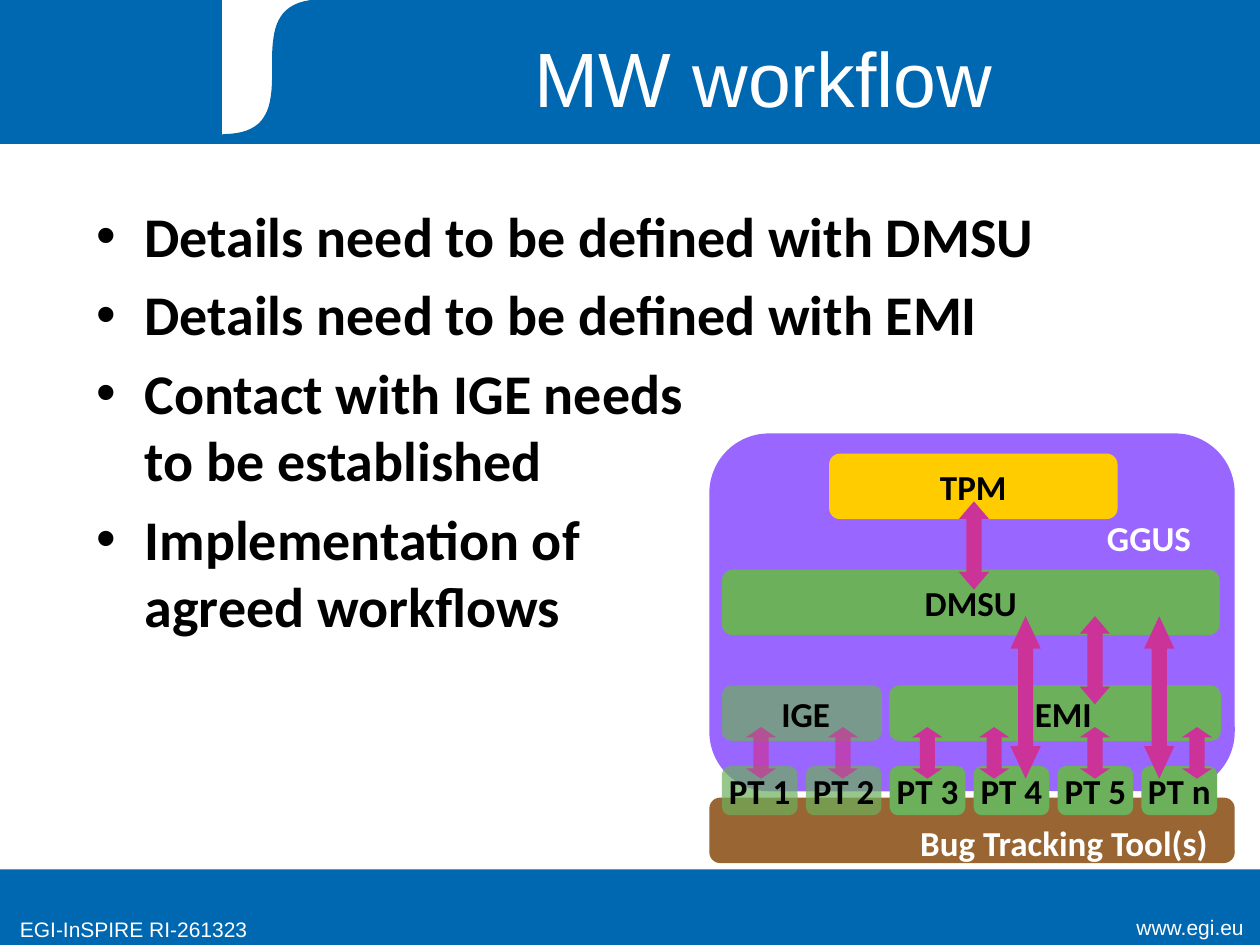
from dataclasses import dataclass
from typing import Optional

from lxml import etree
from pptx import Presentation
from pptx import util as u
from pptx.dml.color import RGBColor
from pptx.enum import shapes, text
from pptx.oxml import ns

BLUE, WHITE, BLACK = "0067B1", "FFFFFF", "000000"
PURPLE, BROWN, GREEN = "9966FF", "996633", "6CB05C"
YELLOW, PINK = "FFCC00", "CC3399"
SOLID, FADED = 100, 70

PAGE_WIDTH, PAGE_HEIGHT = 10, 7.5
FOOTER_TOP, HEADER_HEIGHT = 6.9, 1.14
BULLET_INDENT = 0.38

ARROW_WIDTH = 0.24
HEAD_SHARE = 0.2  # arrowhead length as a share of the arrow length

# Diagram rows and columns
PANEL_LEFT, PANEL_WIDTH = 5.63, 4.17
FIRST_LEFT, LAST_LEFT = 5.73, 9.06
TEAM_TOP, TEAM_HEIGHT = 5.44, 0.44
TRACKER_TOP, TRACKER_WIDTH, TRACKER_HEIGHT = 6.08, 0.6, 0.39
TRACKERS = ["PT 1", "PT 2", "PT 3", "PT 4", "PT 5", "PT n"]
TRACKER_PITCH = (LAST_LEFT - FIRST_LEFT) / (len(TRACKERS) - 1)
IGE_TRACKERS = 2  # the first trackers belong to IGE and are faded
TRACKER_ARROW_XS = [6.04, 6.69, 7.36, 7.89, 8.69, 9.5]

# Heights at which the arrows end
TPM_END, DMSU_UPPER_END, DMSU_LOWER_END = 3.98, 4.68, 4.89
TEAM_UPPER_END, TEAM_LOWER_END, TRACKER_END = 5.59, 5.77, 6.18


@dataclass
class Block:
    left: float
    top: float
    width: float
    height: float
    fill: Optional[str] = None
    label: str = ""
    color: str = BLACK
    opacity: int = SOLID
    pad_left: float = 0
    pad_right: float = 0


@dataclass
class Arrow:
    x: float
    top: float
    bottom: float
    opacity: int = SOLID


@dataclass
class Caption:
    left: float
    top: float
    width: float
    height: float
    words: str
    size: float
    align: text.PP_ALIGN


def rgb(color: str) -> RGBColor:
    return RGBColor.from_string(color)


def paint(shape, fill: Optional[str], line: Optional[str] = None, opacity: int = SOLID) -> None:
    shape.shadow.inherit = False
    if fill:
        shape.fill.solid()
        shape.fill.fore_color.rgb = rgb(fill)
        if opacity < SOLID:
            color = shape._element.spPr.find(f"{ns.qn('a:solidFill')}/{ns.qn('a:srgbClr')}")
            etree.SubElement(color, ns.qn("a:alpha"), val=str(opacity * 1000))
    else:
        shape.fill.background()
    if line:
        shape.line.color.rgb = rgb(line)
        shape.line.width = u.Pt(0.75)
    else:
        shape.line.fill.background()


def style(para, name: str, size: float, color: str, bold: bool = False) -> None:
    para.font.name = name
    para.font.size = u.Pt(size)
    para.font.bold = bold
    para.font.color.rgb = rgb(color)


def add_preset(page, kind, left: float, top: float, width: float, height: float):
    return page.shapes.add_shape(kind, *map(u.Inches, (left, top, width, height)))


def add_text_frame(page, left: float, top: float, width: float, height: float):
    box = page.shapes.add_textbox(*map(u.Inches, (left, top, width, height)))
    box.text_frame.word_wrap = True
    return box.text_frame


def add_block(page, block: Block) -> None:
    shape = add_preset(page, shapes.MSO_SHAPE.ROUNDED_RECTANGLE,
                       block.left, block.top, block.width, block.height)
    paint(shape, block.fill, opacity=block.opacity)
    if not block.label:
        return
    frame = shape.text_frame
    frame.word_wrap = False
    frame.vertical_anchor = text.MSO_ANCHOR.MIDDLE
    frame.margin_left = u.Inches(block.pad_left)
    frame.margin_right = u.Inches(block.pad_right)
    para = frame.paragraphs[0]
    para.text = block.label
    para.alignment = text.PP_ALIGN.CENTER
    style(para, "Calibri", 20, block.color, bold=True)


def add_arrow(page, arrow: Arrow) -> None:
    """Draw a level double arrow around its centre, then turn it upright."""
    length = arrow.bottom - arrow.top
    middle = (arrow.top + arrow.bottom) / 2
    shape = add_preset(page, shapes.MSO_SHAPE.LEFT_RIGHT_ARROW, arrow.x - length / 2,
                       middle - ARROW_WIDTH / 2, length, ARROW_WIDTH)
    shape.rotation = 90
    shape.adjustments[0] = 0.5
    shape.adjustments[1] = HEAD_SHARE * length / ARROW_WIDTH
    paint(shape, PINK, opacity=arrow.opacity)


def add_caption(page, caption: Caption) -> None:
    frame = add_text_frame(page, caption.left, caption.top, caption.width, caption.height)
    frame.vertical_anchor = text.MSO_ANCHOR.MIDDLE
    para = frame.paragraphs[0]
    para.text = caption.words
    para.alignment = caption.align
    style(para, "Arial", caption.size, WHITE)


def add_swoosh(page) -> None:
    """White patch partly covered by a blue outline whose left edge is an S-curve."""
    left, curve_end, right, bottom = 1.77, 2.56, 3.74, 1.07
    patch = add_preset(page, shapes.MSO_SHAPE.RECTANGLE, left, 0, right - left, bottom)
    paint(patch, WHITE, WHITE)

    # Cubic Bezier from bottom left to the top; units are thousandths of an inch
    units, steps = 1000, 40
    controls = [(left, bottom), (curve_end, bottom), (left, 0), (curve_end, 0)]
    curve = []
    for step in range(steps + 1):
        t = step / steps
        weights = [(1 - t) ** 3, 3 * t * (1 - t) ** 2, 3 * t ** 2 * (1 - t), t ** 3]
        curve.append(tuple(units * sum(weight * point[axis]
                                       for weight, point in zip(weights, controls))
                           for axis in (0, 1)))
    builder = page.shapes.build_freeform(right * units, 0, scale=u.Inches(1) / units)
    builder.add_line_segments([(right * units, bottom * units), *curve], close=True)
    paint(builder.convert_to_shape(), BLUE, BLUE)


def add_bullets(page, items: list[str]) -> None:
    frame = add_text_frame(page, 0.67, 1.55, 8.83, 4.95)
    for index, item in enumerate(items):
        para = frame.add_paragraph() if index else frame.paragraphs[0]
        para.text = item
        properties = para._p.get_or_add_pPr()
        properties.set("marL", str(u.Inches(BULLET_INDENT)))
        properties.set("indent", str(-u.Inches(BULLET_INDENT)))
        etree.SubElement(properties, ns.qn("a:buFont"), typeface="Arial")
        etree.SubElement(properties, ns.qn("a:buChar"), char="•")
        para.space_before = u.Pt(6.4 if index else 0)
        style(para, "Calibri", 32, BLACK, bold=True)


def add_diagram(page) -> None:
    blocks = [
        Block(PANEL_LEFT, 3.44, PANEL_WIDTH, 2.84, PURPLE),
        Block(8.77, 4.05, 0.7, 0.43, label="GGUS", color=WHITE),
        Block(PANEL_LEFT, 6.33, PANEL_WIDTH, 0.52, BROWN),
        Block(7.37, 6.47, 2.4, 0.43, label="Bug Tracking Tool(s)", color=WHITE, pad_right=0.25),
        Block(6.58, 3.6, 2.29, 0.52, YELLOW, "TPM"),
        Block(FIRST_LEFT, 4.52, 3.95, 0.52, GREEN, "DMSU"),
        Block(FIRST_LEFT, TEAM_TOP, 1.27, TEAM_HEIGHT, GREEN, "IGE", opacity=FADED, pad_left=0.06),
        Block(7.06, TEAM_TOP, 2.63, TEAM_HEIGHT, GREEN, "EMI", pad_left=0.13),
    ]
    arrows = [Arrow(7.73, TPM_END, DMSU_UPPER_END), Arrow(8.69, DMSU_LOWER_END, TEAM_UPPER_END)]
    arrows += [Arrow(x, DMSU_LOWER_END, TRACKER_END) for x in (8.14, 9.2)]
    for index, (label, x) in enumerate(zip(TRACKERS, TRACKER_ARROW_XS)):
        opacity = FADED if index < IGE_TRACKERS else SOLID
        blocks.append(Block(FIRST_LEFT + index * TRACKER_PITCH, TRACKER_TOP, TRACKER_WIDTH,
                            TRACKER_HEIGHT, GREEN, label, opacity=opacity))
        arrows.append(Arrow(x, TEAM_LOWER_END, TRACKER_END, opacity))
    for block in blocks:
        add_block(page, block)
    for arrow in arrows:
        add_arrow(page, arrow)


def main() -> None:
    deck = Presentation()
    deck.slide_width, deck.slide_height = u.Inches(PAGE_WIDTH), u.Inches(PAGE_HEIGHT)
    page = deck.slides.add_slide(deck.slide_layouts[6])
    for top, height, line in ((FOOTER_TOP, PAGE_HEIGHT - FOOTER_TOP, None), (0, HEADER_HEIGHT, BLUE)):
        band = add_preset(page, shapes.MSO_SHAPE.RECTANGLE, 0, top, PAGE_WIDTH, height)
        paint(band, BLUE, line)
    add_swoosh(page)
    for caption in (Caption(8.39, 7.2, 1.58, 0.31, "www.egi.eu", 12, text.PP_ALIGN.RIGHT),
                    Caption(0.06, 7.22, 2.5, 0.31, "EGI-InSPIRE RI-261323", 12, text.PP_ALIGN.LEFT),
                    Caption(2.32, 0.13, 7.48, 0.95, "MW workflow", 44, text.PP_ALIGN.CENTER)):
        add_caption(page, caption)
    add_diagram(page)
    add_bullets(page, ["Details need to be defined with DMSU",
                       "Details need to be defined with EMI",
                       "Contact with IGE needs\vto be established",
                       "Implementation of\vagreed workflows"])
    deck.save("out.pptx")


if __name__ == "__main__":
    main()
